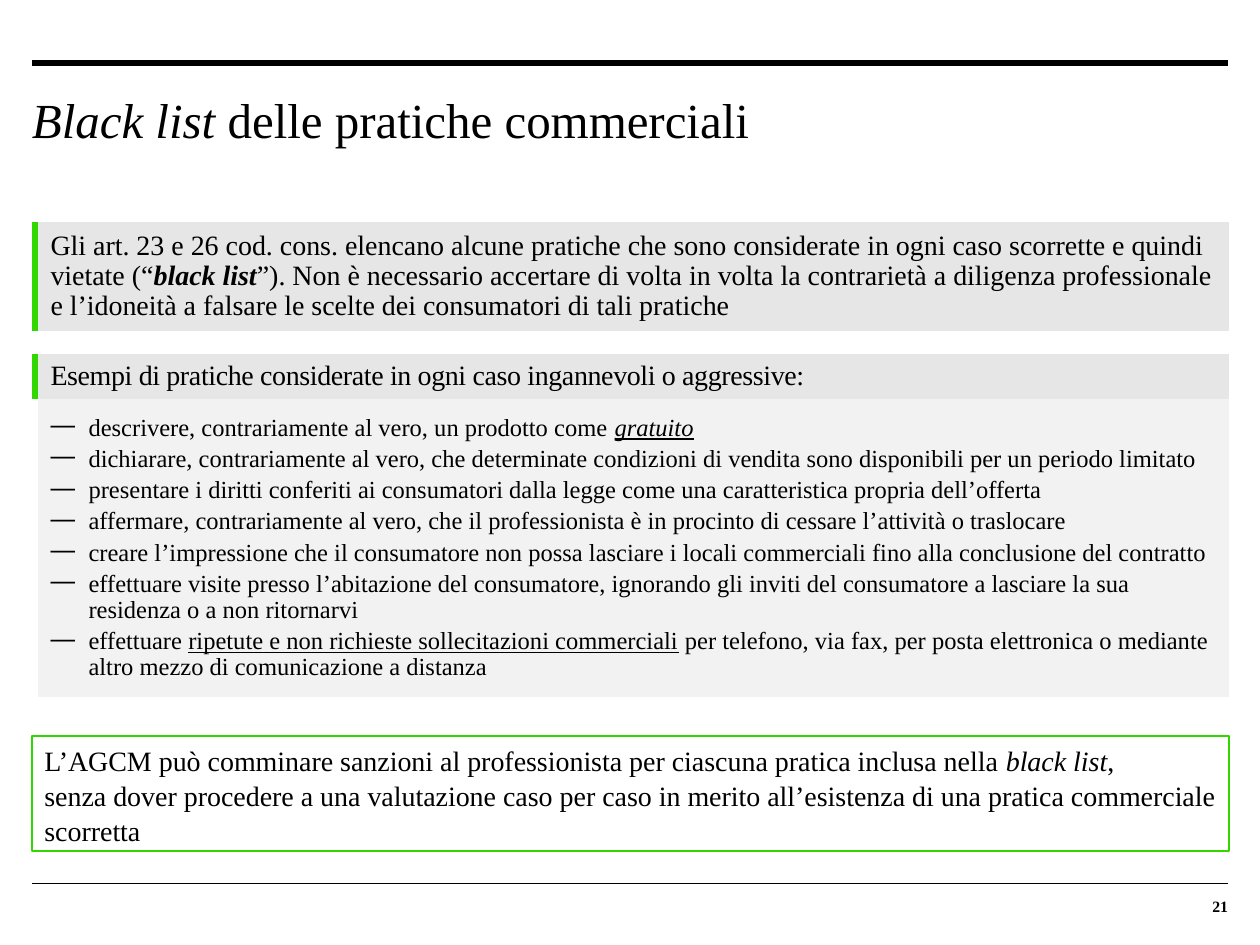
from lxml import etree
from pptx import Presentation
from pptx.dml.color import RGBColor
from pptx.enum.shapes import MSO_CONNECTOR, MSO_SHAPE
from pptx.enum.text import MSO_ANCHOR, PP_ALIGN
from pptx.oxml.ns import qn
from pptx.util import Pt

PX = 914400 / 126
LINE = MSO_CONNECTOR.STRAIGHT
RECT = MSO_SHAPE.RECTANGLE
LEFT, RIGHT = PP_ALIGN.LEFT, PP_ALIGN.RIGHT
TOP, MID, LOW = MSO_ANCHOR.TOP, MSO_ANCHOR.MIDDLE, MSO_ANCHOR.BOTTOM
PLAIN = "{2D5ABB26-0587-4C30-8999-92F81FD0307C}"
FONT = "Times New Roman"
HEX = {"ink": "000000", "green": "32D700", "head": "E6E6E6", "body": "F2F2F2"}
COLOR = {name: RGBColor.from_string(code) for name, code in HEX.items()}


def emu(*sizes):
    return [round(size * PX) for size in sizes]


def write(frame, paras, size=16, pitch=0.96, align=LEFT, after=0, bullet=None, track=0):
    frame.word_wrap = True
    for num, parts in enumerate(paras):
        para = frame.paragraphs[0] if num == 0 else frame.add_paragraph()
        props = para._p.get_or_add_pPr()
        if bullet:
            props.set("marL", str(emu(38)[0]))
            props.set("indent", str(emu(-38)[0]))
            etree.SubElement(props, qn("a:buChar")).set("char", bullet)
        para.alignment = align
        para.line_spacing = pitch
        para.space_after = Pt(after)
        for text, style in parts:
            if text == "\n":
                para.add_line_break()
                continue
            run = para.add_run()
            run.text = text
            font = run.font
            font.name, font.size = FONT, Pt(size)
            font.color.rgb = COLOR["ink"]
            font.bold, font.italic = "b" in style, "i" in style
            font.underline = "u" in style
            if track:
                run._r.get_or_add_rPr().set("spc", str(track))


INTRO = [[
    ("Gli art. 23 e 26 cod. cons. elencano alcune pratiche che sono considerate in ogni caso scorrette e quindi vietate (“", ""),
    ("black list", "bi"),
    ("”). Non è necessario accertare di volta in volta la contrarietà a diligenza professionale e l’idoneità a falsare le scelte dei consumatori di tali pratiche", ""),
]]
LEAD = [[("Esempi di pratiche considerate in ogni caso ingannevoli o aggressive:", "")]]
CASES = [
    [("descrivere, contrariamente al vero, un prodotto come ", ""), ("gratuito", "iu")],
    [("dichiarare, contrariamente al vero, che determinate condizioni di vendita sono disponibili per un periodo limitato", "")],
    [("presentare i diritti conferiti ai consumatori dalla legge come una caratteristica propria dell’offerta", "")],
    [("affermare, contrariamente al vero, che il professionista è in procinto di cessare l’attività o traslocare", "")],
    [("creare l’impressione che il consumatore non possa lasciare i locali commerciali fino alla conclusione del contratto", "")],
    [("effettuare visite presso l’abitazione del consumatore, ignorando gli inviti del consumatore a lasciare la sua residenza o a non ritornarvi", "")],
    [
        ("effettuare ", ""),
        ("ripetute e non richieste sollecitazioni commerciali", "u"),
        (" per telefono, via fax, per posta elettronica o mediante altro mezzo di comunicazione a distanza", ""),
    ],
]
TITLE = [[("Black list ", "i"), ("delle pratiche commerciali", "")]]
CLOSE = [[
    ("L’AGCM può comminare sanzioni al professionista per ciascuna pratica inclusa nella ", ""),
    ("black list", "i"),
    (", ", ""),
    ("\n", ""),
    ("senza dover procedere a una valutazione caso per caso in merito all’esistenza di una pratica commerciale scorretta", ""),
]]

deck = Presentation()
deck.slide_width, deck.slide_height = emu(1260, 945)
slide = deck.slides.add_slide(deck.slide_layouts[6])
shapes = slide.shapes

for y, width in [(63, 3), (883, 0.5)]:
    rule = shapes.add_connector(LINE, *emu(32, y, 1228, y))
    rule.line.color.rgb = COLOR["ink"]
    rule.line.width = Pt(width)
    etree.SubElement(rule._element.spPr, qn("a:effectLst"))

labels = [
    ((32, 84, 1196, 125), TITLE, TOP, {"size": 28, "pitch": 1.1}),
    ((1144, 887, 84, 29), [[("21", "b")]], LOW, {"size": 9, "pitch": 1, "align": RIGHT}),
]
for area, paras, anchor, style in labels:
    frame = shapes.add_textbox(*emu(*area)).text_frame
    frame.margin_left = frame.margin_right = 0
    frame.margin_top = frame.margin_bottom = 0
    frame.vertical_anchor = anchor
    write(frame, paras, **style)

tables = [
    (222, [(106, "green", "head", INTRO, {})]),
    (354, [
        (43, "green", "head", LEAD, {"track": -20}),
        (288, None, "body", CASES, {"size": 14, "after": 3, "bullet": "—"}),
    ]),
]
for y, rows in tables:
    tall = sum(row[0] for row in rows)
    table = shapes.add_table(len(rows), 2, *emu(32, y, 1197, tall)).table
    table.first_row = table.horz_banding = False
    table._tbl.tblPr.find(qn("a:tableStyleId")).text = PLAIN
    table.columns[0].width, table.columns[1].width = emu(6, 1191)
    for num, (high, tint, fill, paras, style) in enumerate(rows):
        table.rows[num].height = emu(high)[0]
        bar, cell = table.cell(num, 0), table.cell(num, 1)
        bar.margin_left = bar.margin_right = 0
        bar.margin_top = bar.margin_bottom = 0
        if tint:
            bar.fill.solid()
            bar.fill.fore_color.rgb = COLOR[tint]
        else:
            bar.fill.background()
        cell.fill.solid()
        cell.fill.fore_color.rgb = COLOR[fill]
        cell.vertical_anchor = MID
        write(cell.text_frame, paras, **style)

box = shapes.add_shape(RECT, *emu(32, 736, 1197, 115))
box.shadow.inherit = False
box.fill.background()
box.line.color.rgb = COLOR["green"]
box.line.width = Pt(1)
box.text_frame.vertical_anchor = TOP
write(box.text_frame, CLOSE, pitch=1.04)

deck.save("out.pptx")
